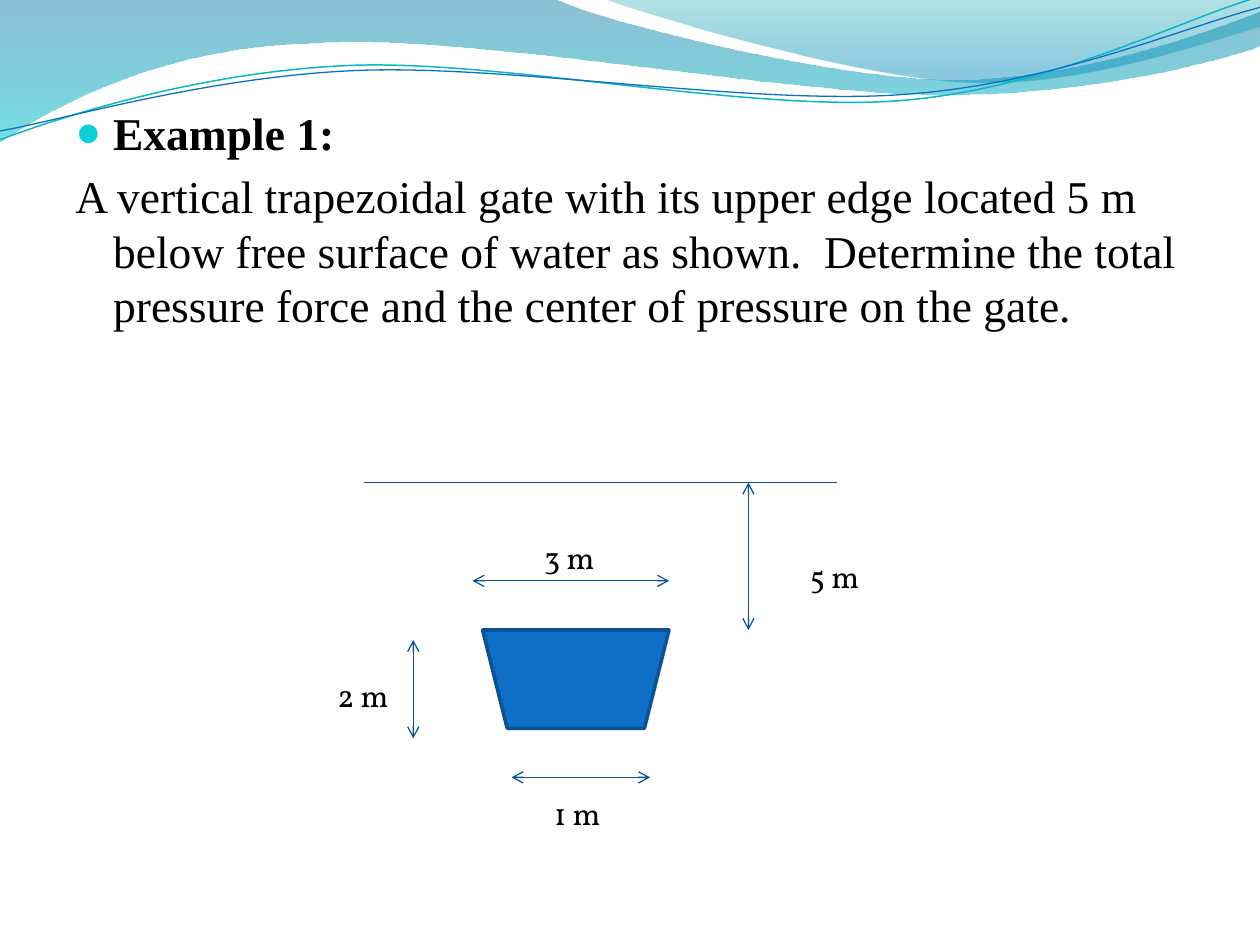
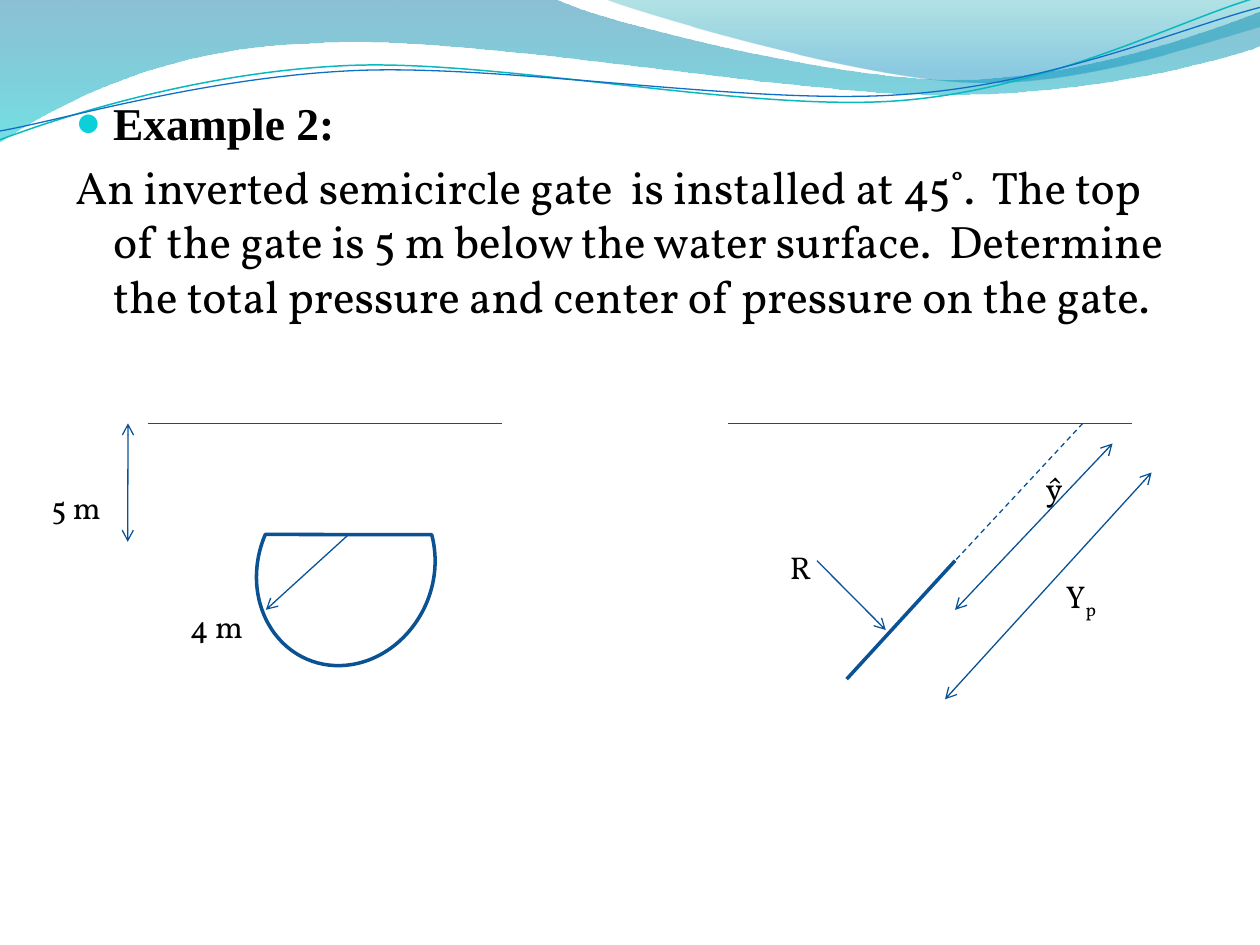
from math import cos, radians, sin

from lxml.etree import SubElement
from pptx import Presentation
from pptx.dml.color import RGBColor
from pptx.enum.dml import MSO_LINE
from pptx.enum.shapes import MSO_CONNECTOR, MSO_SHAPE
from pptx.oxml.ns import qn
from pptx.util import Inches, Pt

# Grid: 100 columns by 75 rows of square cells
COLUMNS, ROWS = 100, 75
CELL = Inches(0.1)

BLACK = RGBColor(0x00, 0x00, 0x00)
GATE_BLUE = RGBColor(0x0F, 0x6F, 0xC6)
GATE_EDGE = RGBColor(0x0B, 0x52, 0x92)
LINE_BLUE = RGBColor(0x09, 0x52, 0x95)
BULLET_CYAN = RGBColor(0x0B, 0xD0, 0xD9)
WAVE_TEAL = RGBColor(0x0A, 0xB8, 0xBF)
BAND_TOP = RGBColor(0x00, 0x74, 0xA1)
BAND_BOTTOM = RGBColor(0x00, 0xC6, 0xCF)
CREST_TOP = RGBColor(0x00, 0xA1, 0xA9)
CREST_BOTTOM = RGBColor(0x00, 0x8B, 0xBF)

SERIF = "Times New Roman"
BOOK = "Vollkorn"

# Wave edges: a start point, then two handles and an end point per curve
BAND_UPPER = [(44, -0.1), (47.6, 1.7), (66.4, 6.3), (75.8, 6.3),
              (85.3, 6.3), (95.8, 2.6), (100, 0.9)]
BAND_LOWER = [(100.1, 3.6), (98.3, 4.4), (87, 7.6), (74.6, 7.5),
              (62.2, 7.5), (38.2, 2.8), (25.7, 3.4),
              (12.9, 3.6), (4.6, 8.3), (-0.1, 11.3)]
CREST = [(47.9, -0.1), (50.9, 1.1), (68.2, 6.2), (76.9, 6.5),
         (85.6, 6.9), (96.1, 3.2), (100, 2.1)]
TEAL_WAVE = [(0, 11.1), (4.8, 9.3), (15.8, 5.7), (27.7, 5.2),
             (39.5, 4.7), (59.3, 8.9), (71.3, 8),
             (83.3, 7.1), (93.8, 1.5), (99.8, -0.2)]
BLUE_WAVE = [(0, 10.4), (4.7, 9.6), (16.4, 6.1), (28.3, 5.6),
             (40.3, 5.1), (59.7, 8.4), (71.7, 7.5),
             (83.6, 6.7), (94.1, 2.1), (100, 0.6)]
WAVE_TILT = 357.3


def cells(*counts):
    return [round(count * CELL) for count in counts]


def add_outline(slide, edges, closed):
    """Join edges by straight lines; within an edge, draw cubic curves."""
    start, *rest = [cells(*point) for edge in edges for point in edge]
    builder = slide.shapes.build_freeform(*start, scale=1.0)
    builder.add_line_segments(rest, close=closed)
    outline = builder.convert_to_shape()
    outline.shadow.inherit = False

    # Merge every three segments of an edge into one curve
    route = outline._element.xpath(".//a:path")[0]
    segments = list(route)
    edge_start = 0
    for edge in edges:
        for first in range(edge_start + 1, edge_start + len(edge), 3):
            curve, *others = segments[first:first + 3]
            curve.tag = qn("a:cubicBezTo")
            for other in others:
                curve.append(other[0])
                route.remove(other)
        edge_start += len(edge)
    return outline


def add_band(slide, edges, stops):
    """Closed band with a see-through downward gradient."""
    band = add_outline(slide, edges, closed=True)
    band.line.fill.background()
    band.fill.gradient()
    band.fill.gradient_angle = 270
    for stop, (position, color, _) in zip(band.fill.gradient_stops, stops):
        stop.position = position
        stop.color.rgb = color
    tints = band._element.xpath(".//a:gradFill//a:srgbClr")
    for tint, (_, _, opacity) in zip(tints, stops):
        SubElement(tint, qn("a:alpha"), val=str(opacity * 1000))


def level(edge):
    """Undo the tilt of a wave, about the middle of its ends."""
    turn = radians(-WAVE_TILT)
    middle_x, middle_y = [(a + b) / 2 for a, b in zip(edge[0], edge[-1])]
    return [(middle_x + (x - middle_x) * cos(turn) - (y - middle_y) * sin(turn),
             middle_y + (x - middle_x) * sin(turn) + (y - middle_y) * cos(turn))
            for x, y in edge]


def add_wave(slide, edge, color, width):
    wave = add_outline(slide, [level(edge)], closed=False)
    wave.rotation = WAVE_TILT
    wave.fill.background()
    wave.line.color.rgb = color
    wave.line.width = Pt(width)


def add_water_header(slide):
    add_band(slide, [[(0, 0)], BAND_UPPER, BAND_LOWER],
             [(0, BAND_TOP, 45), (1, BAND_BOTTOM, 55)])
    add_band(slide, [CREST, [(100, 0)]],
             [(0, CREST_TOP, 30), (0.8, CREST_BOTTOM, 45)])
    add_wave(slide, TEAL_WAVE, WAVE_TEAL, 0.85)
    add_wave(slide, BLUE_WAVE, GATE_BLUE, 0.75)


def write(paragraph, text, font=BOOK, size=18, bold=False, baseline=0):
    run = paragraph.add_run()
    run.text = text
    run.font.name = font
    run.font.size = Pt(size)
    run.font.bold = bold
    run.font.color.rgb = BLACK
    if baseline:
        run.font._element.set("baseline", str(baseline * 1000))


def add_text_frame(slide, left, top, width, height):
    frame = slide.shapes.add_textbox(*cells(left, top, width, height)).text_frame
    frame.word_wrap = True
    return frame


def add_label(slide, left, top, text, subscript="", width=6.3):
    paragraph = add_text_frame(slide, left, top, width, 4).paragraphs[0]
    write(paragraph, text)
    if subscript:
        write(paragraph, subscript, baseline=-25)


def add_problem(slide, top, heading, statement, font):
    """Bulleted heading over the problem statement, both with a hanging indent."""
    frame = add_text_frame(slide, 5, top, 90, 69.2 - top)
    title, body = frame.paragraphs[0], frame.add_paragraph()
    write(title, heading, font=SERIF, size=26, bold=True)
    write(body, statement, font=font, size=26)
    for paragraph in (title, body):
        paragraph.space_before = Pt(5.2)
        properties = paragraph._p.get_or_add_pPr()
        properties.set("marL", str(3 * CELL))
        properties.set("indent", str(-3 * CELL))
    bullet = title._p.get_or_add_pPr()
    SubElement(SubElement(bullet, qn("a:buClr")), qn("a:srgbClr"),
               val=str(BULLET_CYAN))
    SubElement(bullet, qn("a:buSzPct"), val="95000")
    SubElement(bullet, qn("a:buFont"), typeface=SERIF)
    SubElement(bullet, qn("a:buChar"), char="●")


def add_line(slide, start, end, width=0.75, dash=None, arrows=()):
    line = slide.shapes.add_connector(MSO_CONNECTOR.STRAIGHT,
                                      *cells(*start, *end))
    line.line.color.rgb = LINE_BLUE
    line.line.width = Pt(width)
    if dash:
        line.line.dash_style = dash
    stroke = line._element.xpath(".//a:ln")[0]
    for side in arrows:
        SubElement(stroke, qn(f"a:{side}End"), type="arrow")
    SubElement(line._element.spPr, qn("a:effectLst"))


def add_dimension(slide, start, end):
    add_line(slide, start, end, arrows=("head", "tail"))


def add_pointer(slide, start, end):
    add_line(slide, start, end, arrows=("tail",))


def add_gate(slide, preset, box, rotation, fill=None):
    gate = slide.shapes.add_shape(preset, *cells(*box))
    gate.rotation = rotation
    gate.shadow.inherit = False
    gate.line.color.rgb = GATE_EDGE
    gate.line.width = Pt(2)
    if fill is None:
        gate.fill.background()
    else:
        gate.fill.solid()
        gate.fill.fore_color.rgb = fill


def build_trapezoid_example(slide):
    add_problem(slide, 7.82, "Example 1:",
                "A vertical trapezoidal gate with its upper edge located 5 m "
                "below free surface of water as shown.  Determine the total "
                "pressure force and the center of pressure on the gate.", SERIF)
    surface, gate_top = 38.3, 50
    add_gate(slide, MSO_SHAPE.TRAPEZOID, (38.3, gate_top, 14.8, 7.8), 180,
             GATE_BLUE)
    add_line(slide, (28.9, surface), (66.4, surface))

    # Depth, top width, height and bottom width of the gate
    add_dimension(slide, (59.4, surface), (59.4, gate_top))
    add_dimension(slide, (37.5, 46.1), (53.1, 46.1))
    add_dimension(slide, (32.8, 50.8), (32.8, 58.6))
    add_dimension(slide, (40.6, 61.7), (51.6, 61.7))
    add_label(slide, 63.3, 43.75, "5 m", width=10.2)
    add_label(slide, 42.2, 42.2, "3 m")
    add_label(slide, 25.8, 53.13, "2 m", width=7)
    add_label(slide, 43, 62.5, "1 m", width=7)


def build_semicircle_example(slide):
    add_problem(slide, 7.05, "Example 2:",
                "An inverted semicircle gate  is installed at 45˚.  The top of "
                "the gate is 5 m below the water surface.  Determine  the total "
                "pressure and center of pressure on the gate.", BOOK)
    surface = 33.6

    # Front view
    add_line(slide, (11.72, surface), (39.84, surface))
    add_gate(slide, MSO_SHAPE.CHORD, (19.65, 38.2, 15.6, 13.9), 293.2)
    add_dimension(slide, (10.16, surface), (10.14, 43))
    add_pointer(slide, (27.7, 42.4), (21.1, 48.4))
    add_label(slide, 3.1, 38.28, "5 m")
    add_label(slide, 14.1, 47.7, "4 m", width=7)

    # Side view: the gate and its extension up to the surface
    gate_top = (75.8, 44.5)
    add_line(slide, (57.8, surface), (89.84, surface))
    add_line(slide, (85.94, surface), gate_top, dash=MSO_LINE.DASH)
    add_line(slide, gate_top, (67.2, 53.9), width=2)
    add_pointer(slide, (64.84, 44.5), (70.3, 50))
    add_dimension(slide, (88.3, 35.2), (75.8, 48.4))
    add_dimension(slide, (91.4, 37.5), (75, 55.5))
    add_label(slide, 83.6, 45.3, "Y", subscript="p", width=7.8)
    add_label(slide, 82, 36.7, "ŷ")
    add_label(slide, 61.7, 43, "R")


def main():
    deck = Presentation()
    deck.slide_width, deck.slide_height = cells(COLUMNS, ROWS)
    for build_example in (build_trapezoid_example, build_semicircle_example):
        slide = deck.slides.add_slide(deck.slide_layouts[6])
        add_water_header(slide)
        build_example(slide)
    deck.save("out.pptx")


if __name__ == "__main__":
    main()
